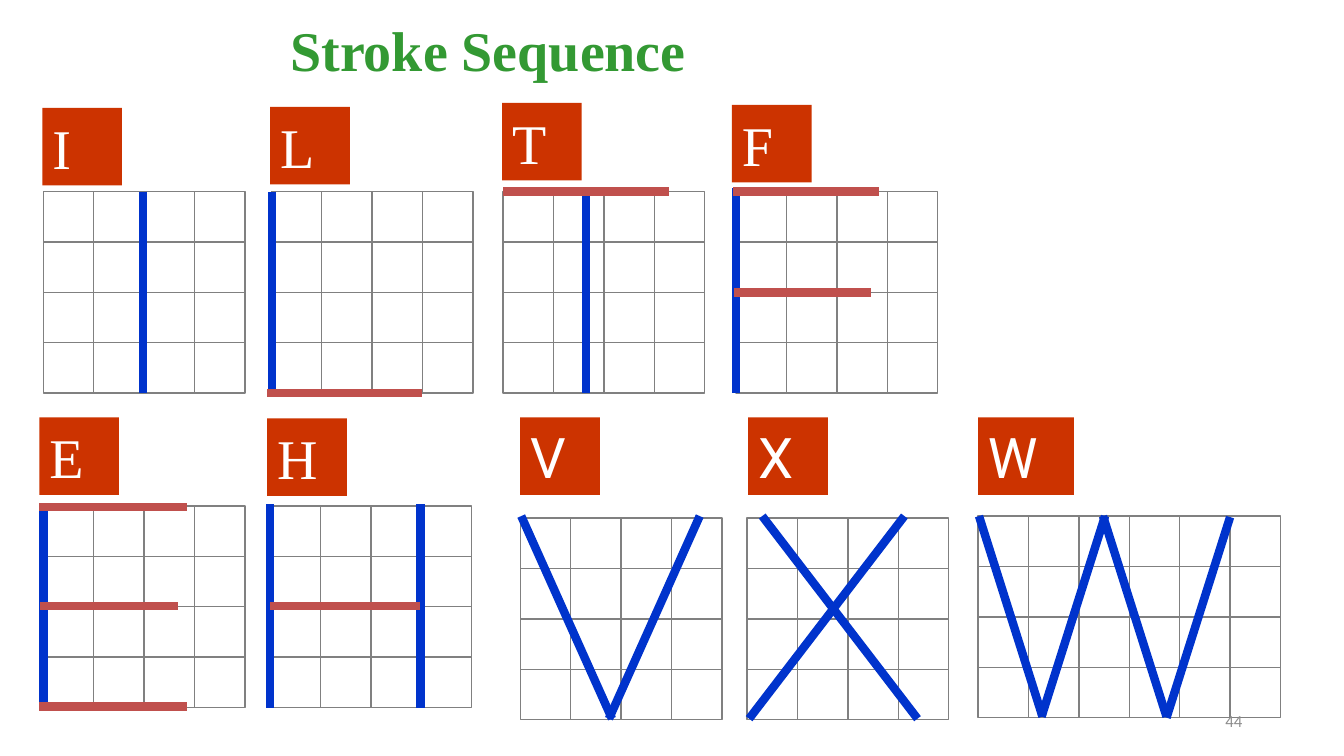
"""Build the slide that shows the stroke sequence of nine capital letters."""
from pptx import Presentation
from pptx.dml.color import RGBColor
from pptx.enum.shapes import MSO_CONNECTOR, MSO_SHAPE
from pptx.enum.text import MSO_ANCHOR, PP_ALIGN
from pptx.oxml.ns import qn
from pptx.util import Inches, Pt
from lxml import etree

COLORS = {"title": "339933", "tile": "CC3300", "letter": "FFFFFF", "grid": "808080",
          "blue": "0033CC", "red": "C0504D", "number": "8C8C8C"}
SERIF, SANS = "Times New Roman", "Roboto"
CELL, ROWS = 0.5, 4
TILE_HEIGHT = 0.77

LETTERS = [
    ("I", SERIF, (0.42, 1.07, 0.79), (0.43, 1.9, [4]),
     [("blue", 1.42, 1.9, 1.42, 3.9)]),
    ("L", SERIF, (2.68, 1.06, 0.79), (2.69, 1.9, [4]),
     [("blue", 2.7, 1.9, 2.7, 3.9), ("red", 2.65, 3.9, 4.19, 3.9)]),
    ("T", SERIF, (4.98, 1.02, 0.79), (4.99, 1.9, [4]),
     [("blue", 5.81, 1.87, 5.81, 3.9), ("red", 4.99, 1.9, 6.64, 1.9)]),
    ("F", SERIF, (7.26, 1.04, 0.79), (7.3, 1.9, [4]),
     [("blue", 7.3, 1.87, 7.3, 3.9), ("red", 7.27, 1.9, 8.72, 1.9),
      ("red", 7.28, 2.9, 8.64, 2.9)]),
    ("E", SERIF, (0.39, 4.14, 0.79), (0.43, 5.02, [4]),
     [("blue", 0.43, 5.02, 0.43, 7.02), ("red", 0.39, 5.03, 1.85, 5.03),
      ("red", 0.39, 7.01, 1.85, 7.01), ("red", 0.4, 6.01, 1.77, 6.01)]),
    ("H", SERIF, (2.65, 4.15, 0.79), (2.68, 5.02, [4]),
     [("blue", 2.68, 5, 2.68, 7.02), ("blue", 4.17, 5, 4.17, 7.02),
      ("red", 2.68, 6.01, 4.17, 6.01)]),
    ("V", SANS, (5.16, 4.14, 0.79), (5.16, 5.14, [4]),
     [("blue", 5.17, 5.12, 6.07, 7.13), ("blue", 6.94, 5.12, 6.04, 7.13)]),
    ("X", SANS, (7.42, 4.14, 0.79), (7.41, 5.14, [4]),
     [("blue", 8.97, 5.12, 7.43, 7.13), ("blue", 7.56, 5.12, 9.1, 7.13)]),
    ("W", SANS, (9.7, 4.14, 0.95), (9.7, 5.12, [4, 2]),
     [("blue", 9.71, 5.12, 10.34, 7.11), ("blue", 10.94, 5.12, 11.57, 7.11),
      ("blue", 10.96, 5.12, 10.33, 7.11), ("blue", 12.2, 5.13, 11.57, 7.12)]),
]


def add_line(shapes, color, width, *ends):
    """Draw a straight line between two points given in inches."""
    line = shapes.add_connector(MSO_CONNECTOR.STRAIGHT, *map(Inches, ends))
    line.line.color.rgb = RGBColor.from_string(COLORS[color])
    line.line.width = Pt(width)
    etree.SubElement(line._element.spPr, qn("a:effectLst"))


def write_text(shape, text, font, size, color, align, anchor):
    """Fill a shape with one formatted paragraph."""
    frame = shape.text_frame
    frame.word_wrap = True
    frame.vertical_anchor = anchor
    paragraph = frame.paragraphs[0]
    paragraph.text = text
    paragraph.alignment = align
    paragraph.font.name = font
    paragraph.font.size = Pt(size)
    paragraph.font.color.rgb = RGBColor.from_string(COLORS[color])
    return paragraph


presentation = Presentation()
presentation.slide_width = Inches(13.33)
presentation.slide_height = Inches(7.5)
slide = presentation.slides.add_slide(presentation.slide_layouts[5])

title = slide.shapes.title
title.left, title.top = Inches(0.59), Inches(0)
title.width, title.height = Inches(8.5), Inches(0.97)
heading = write_text(title, "Stroke Sequence", SERIF, 40, "title",
                     PP_ALIGN.CENTER, MSO_ANCHOR.MIDDLE)
heading.font.bold = True

for letter, font, (tile_left, tile_top, tile_width), (left, top, blocks), strokes in LETTERS:
    tile = slide.shapes.add_shape(MSO_SHAPE.RECTANGLE, Inches(tile_left), Inches(tile_top),
                                  Inches(tile_width), Inches(TILE_HEIGHT))
    tile.shadow.inherit = False
    tile.fill.solid()
    tile.fill.fore_color.rgb = RGBColor.from_string(COLORS["tile"])
    tile.line.fill.background()
    write_text(tile, letter, font, 40, "letter", PP_ALIGN.LEFT, MSO_ANCHOR.BOTTOM)

    grid = slide.shapes.add_group_shape()
    height = ROWS * CELL
    for columns in blocks:
        width = columns * CELL
        frame = grid.shapes.add_shape(MSO_SHAPE.RECTANGLE, Inches(left), Inches(top),
                                      Inches(width), Inches(height))
        frame.shadow.inherit = False
        frame.fill.background()
        frame.line.color.rgb = RGBColor.from_string(COLORS["grid"])
        frame.line.width = Pt(1)
        for column in range(1, columns):
            x = left + column * CELL
            add_line(grid.shapes, "grid", 1, x, top, x, top + height)
        for row in range(1, ROWS):
            y = top + row * CELL
            add_line(grid.shapes, "grid", 1, left, y, left + width, y)
        left += width

    for color, *ends in strokes:
        add_line(slide.shapes, color, 6, *ends)

number = slide.shapes.add_textbox(Inches(9.42), Inches(6.95), Inches(3), Inches(0.4))
write_text(number, "44", "Calibri", 12, "number", PP_ALIGN.RIGHT, MSO_ANCHOR.MIDDLE)

presentation.save("out.pptx")
